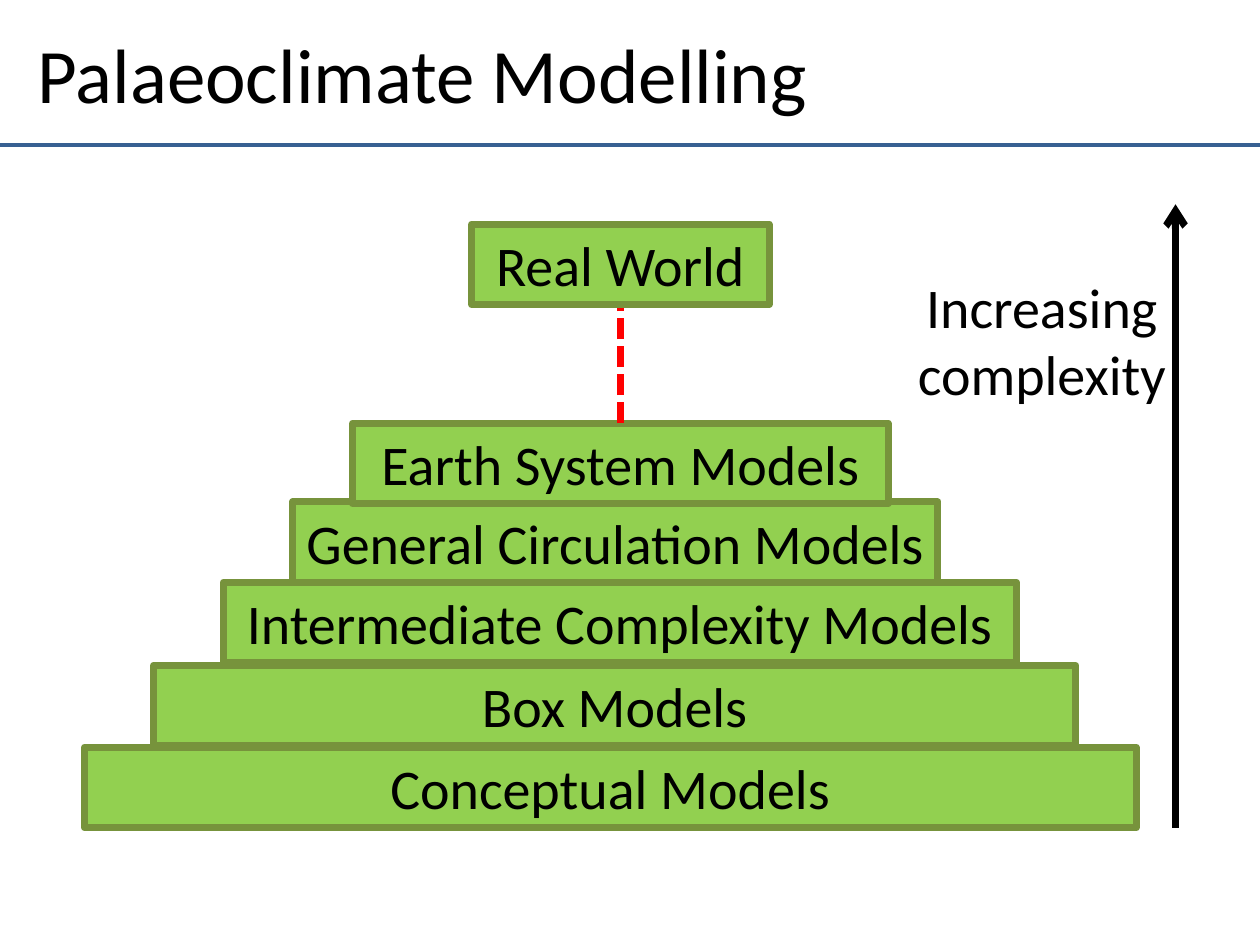
from typing import NamedTuple

from lxml import etree
from pptx import Presentation
from pptx.dml.color import RGBColor
from pptx.enum.dml import MSO_LINE
from pptx.enum.shapes import MSO_CONNECTOR, MSO_SHAPE
from pptx.enum.text import MSO_ANCHOR, PP_ALIGN
from pptx.oxml.ns import qn
from pptx.util import Pt

RECT = MSO_SHAPE.RECTANGLE
LINE = MSO_CONNECTOR.STRAIGHT
DASH = MSO_LINE.SQUARE_DOT
TOP, MIDDLE = MSO_ANCHOR.TOP, MSO_ANCHOR.MIDDLE
LEFT, CENTER = PP_ALIGN.LEFT, PP_ALIGN.CENTER

FONT = "Calibri"
COLORS = {
    "text": "000000",
    "rule": "376092",
    "fill": "92D050",
    "edge": "77933C",
    "link": "FF0000",
}
WIDTH, HEIGHT = 720, 540
STEP = 46  # height of one box
RULE = 82.8
AXIS = 671.75


class Tier(NamedTuple):
    label: str
    left: float
    top: float
    width: float


TIERS = [
    Tier("Conceptual Models", 48.25, 427, 601),
    Tier("Box Models", 87.75, 380.2, 527),
    Tier("Intermediate Complexity Models", 127.5, 332.8, 453.5),
    Tier("General Circulation Models", 167.25, 286.8, 368.75),
    Tier("Earth System Models", 201.5, 241.8, 306),
]
WORLD = Tier("Real World", 269.5, 128, 170)


def tint(name: str) -> RGBColor:
    return RGBColor.from_string(COLORS[name])


def write(shape, text: str, size: float, align=CENTER, anchor=TOP, wrap=True) -> None:
    frame = shape.text_frame
    frame.word_wrap = wrap
    frame.vertical_anchor = anchor
    para = frame.paragraphs[0]
    para.alignment = align
    run = para.add_run()
    run.text = text
    run.font.name = FONT
    run.font.size = Pt(size)
    run.font.color.rgb = tint("text")


def add_text(slide, text: str, box: tuple, size: float, **style) -> None:
    write(slide.shapes.add_textbox(*map(Pt, box)), text, size, **style)


def add_tier(slide, tier: Tier):
    box = (tier.left, tier.top, tier.width, STEP)
    shape = slide.shapes.add_shape(RECT, *map(Pt, box))
    shape.shadow.inherit = False
    shape.fill.solid()
    shape.fill.fore_color.rgb = tint("fill")
    shape.line.color.rgb = tint("edge")
    shape.line.width = Pt(4)
    write(shape, tier.label, 32, wrap=False)
    return shape


def add_line(slide, ends: tuple, color: str, width: float):
    line = slide.shapes.add_connector(LINE, *map(Pt, ends))
    line.line.color.rgb = tint(color)
    line.line.width = Pt(width)
    etree.SubElement(line._element.spPr, qn("a:effectLst"))
    return line


def add_head(line) -> None:
    """Put an open arrowhead at the end of the line."""
    edge = line.line._get_or_add_ln()
    etree.SubElement(edge, qn("a:tailEnd"), type="arrow")


def main() -> None:
    deck = Presentation()
    deck.slide_width, deck.slide_height = Pt(WIDTH), Pt(HEIGHT)
    slide = deck.slides.add_slide(deck.slide_layouts[6])

    add_text(slide, "Palaeoclimate Modelling", (14.4, 0, 669.6, RULE), 44,
             align=LEFT, anchor=MIDDLE)
    add_line(slide, (0, RULE, WIDTH, RULE), "rule", 2)

    earth = [add_tier(slide, tier) for tier in TIERS][-1]
    mid = WORLD.left + WORLD.width / 2
    link = add_line(slide, (mid, TIERS[-1].top, mid, WORLD.top + STEP), "link", 4)
    link.line.dash_style = DASH
    world = add_tier(slide, WORLD)
    link.begin_connect(earth, 0)
    link.end_connect(world, 2)

    add_head(add_line(slide, (AXIS, 473, AXIS, 116.75), "text", 4))
    add_text(slide, "Increasing complexity", (501.8, 152, 187.2, 85), 32)

    deck.save("out.pptx")


if __name__ == "__main__":
    main()
